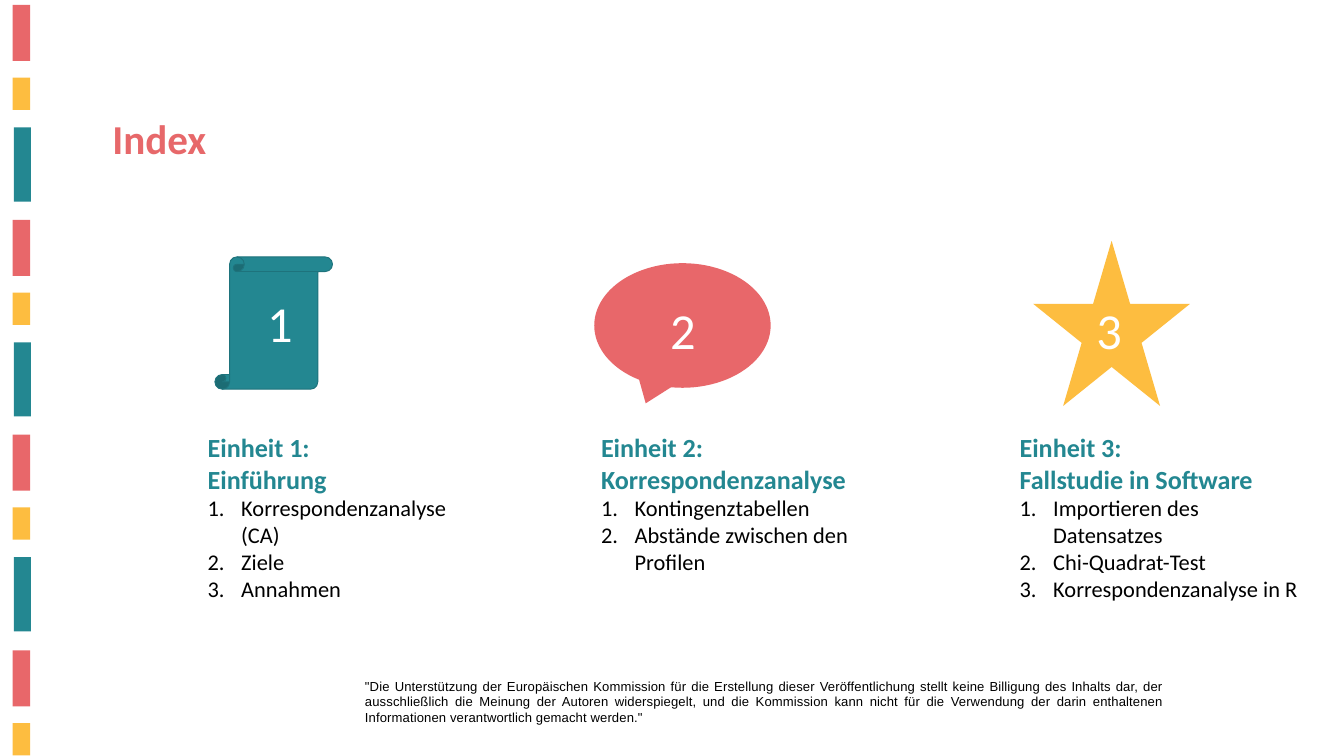
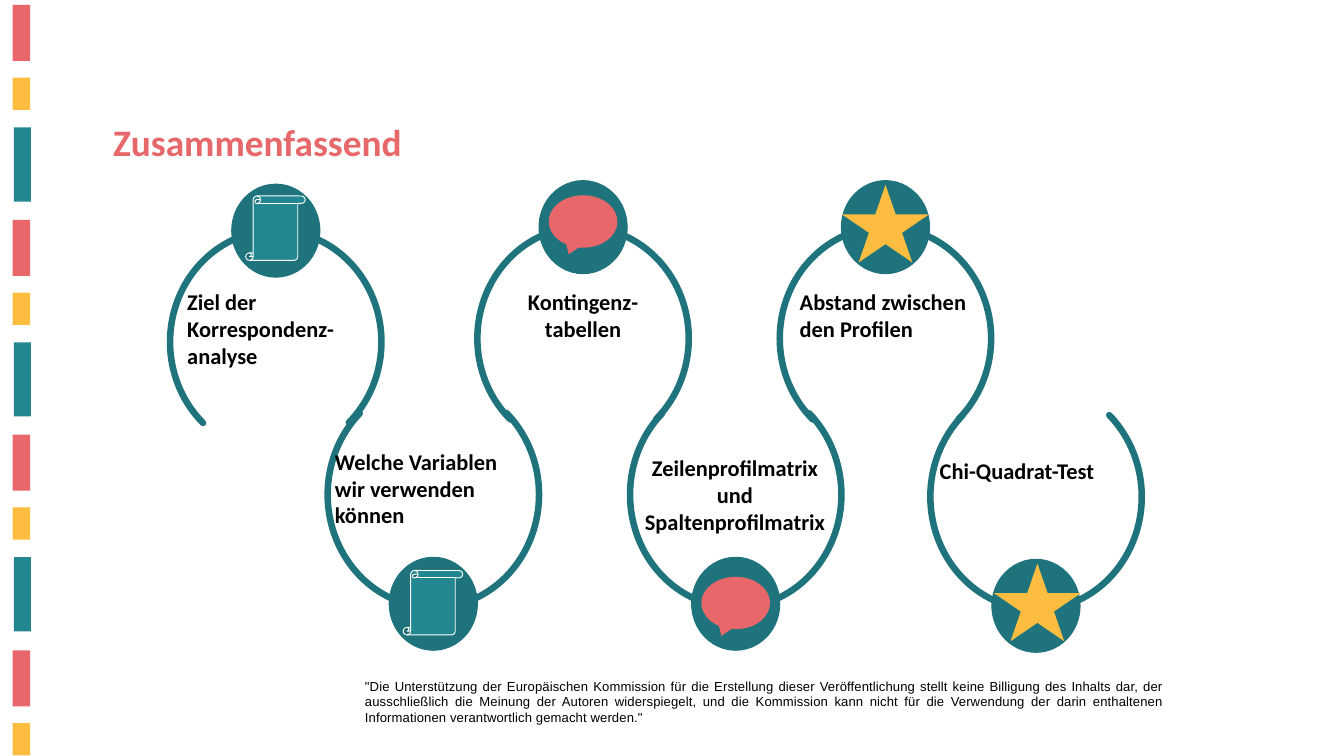
"""Build the index and summary slides of a course on correspondence analysis."""
from dataclasses import dataclass
from typing import NamedTuple, Optional

from lxml.etree import SubElement
from pptx import Presentation
from pptx.dml.color import RGBColor
from pptx.enum.shapes import MSO_SHAPE as Kind
from pptx.enum.text import MSO_ANCHOR as Anchor, MSO_AUTO_SIZE as Fit, PP_ALIGN as Align
from pptx.oxml.ns import qn
from pptx.shapes.autoshape import Shape
from pptx.slide import Slide
from pptx.text.text import TextFrame
from pptx.util import Pt

PX = 9525
TEAL = RGBColor(0x23, 0x87, 0x91)
DARK = RGBColor(0x1E, 0x73, 0x7C)
RED = RGBColor(0xE8, 0x67, 0x6A)
ROSE = RGBColor(0xE7, 0x68, 0x6A)
GOLD = RGBColor(0xFD, 0xBD, 0x40)
BLACK = RGBColor(0, 0, 0)
WHITE = RGBColor(0xFF, 0xFF, 0xFF)

NOTE = (
    '"Die Unterstützung der Europäischen Kommission für die Erstellung dieser '
    "Veröffentlichung stellt keine Billigung des Inhalts dar, der ausschließlich "
    "die Meinung der Autoren widerspiegelt, und die Kommission kann nicht für die "
    'Verwendung der darin enthaltenen Informationen verantwortlich gemacht werden."'
)


class Box(NamedTuple):
    """A place on the slide in px."""
    left: int
    top: int
    width: int
    height: int

    def emu(self) -> list[int]:
        """Return the four lengths in EMU."""
        return [size * PX for size in self]


class Style(NamedTuple):
    """The look of a paragraph."""
    size: int
    color: RGBColor
    bold: bool = False
    align: Align = Align.LEFT
    face: str = "Calibri"


class Icon(NamedTuple):
    """A filled symbol and its size in a circle."""
    kind: Kind
    fill: RGBColor
    width: int
    height: int
    edge: Optional[RGBColor] = None


class Stripe(NamedTuple):
    """A dash of the side band, repeated downwards."""
    box: Box
    fill: RGBColor
    count: int


@dataclass
class Unit:
    """A column of the index."""
    icon: Icon
    place: Box
    digit: Box
    body: Box
    head: list[str]
    items: list[str]


@dataclass
class Loop:
    """An arc with a circle, a symbol and a label."""
    left: int
    top: int
    down: bool
    icon: Icon
    shift: tuple[int, int]
    label: Box
    lines: list[str]
    align: Align = Align.LEFT


HEAD = Style(28, TEAL, True)
ITEM = Style(24, BLACK)
DIGIT = Style(54, WHITE)
FOOT = Style(14, BLACK, align=Align.JUSTIFY, face="Arial")

SCROLL = Icon(Kind.VERTICAL_SCROLL, TEAL, 85, 92, WHITE)
SPEECH = Icon(Kind.OVAL_CALLOUT, RED, 98, 75)
STAR = Icon(Kind.STAR_5_POINT, GOLD, 124, 111)

STRIPES = [
    Stripe(Box(18, 7, 25, 80), RED, 4),
    Stripe(Box(18, 111, 25, 46), GOLD, 4),
    Stripe(Box(20, 182, 24, 106), TEAL, 3),
]

UNITS = [
    Unit(SCROLL._replace(edge=DARK), Box(307, 367, 168, 189), Box(372, 413, 152, 97),
         Box(287, 612, 408, 339), ["Einheit 1:", "Einführung"],
         ["Korrespondenzanalyse (CA)", "Ziele", "Annahmen"]),
    Unit(SPEECH, Box(849, 376, 252, 178), Box(948, 423, 104, 97),
         Box(849, 612, 396, 217), ["Einheit 2: Korrespondenzanalyse"],
         ["Kontingenztabellen", "Abstände zwischen den Profilen"]),
    Unit(STAR, Box(1476, 344, 224, 236), Box(1557, 423, 144, 97),
         Box(1447, 612, 426, 255), ["Einheit 3:", "Fallstudie in Software"],
         ["Importieren des Datensatzes", "Chi-Quadrat-Test", "Korrespondenzanalyse in R"]),
]

LOOPS = [
    Loop(243, 329, False, SCROLL, (20, 17), Box(258, 407, 278, 165),
         ["Ziel der Korrespondenz-analyse"]),
    Loop(468, 545, True, SCROLL, (20, 19), Box(469, 635, 296, 165),
         ["Welche Variablen wir verwenden können"]),
    Loop(682, 324, False, SPEECH, (14, 21), Box(685, 407, 296, 126),
         ["Kontingenz-", "tabellen"], Align.CENTER),
    Loop(900, 545, True, SPEECH, (14, 28), Box(911, 644, 278, 126),
         ["Zeilenprofilmatrix und Spaltenprofilmatrix"], Align.CENTER),
    Loop(1114, 324, False, STAR, (1, 6), Box(1133, 407, 264, 126),
         ["Abstand zwischen den Profilen"]),
    Loop(1329, 548, True, STAR, (3, 6), Box(1333, 648, 297, 87), ["Chi-Quadrat-Test"]),
]


def draw(shapes, kind: Kind, box: Box, fill: Optional[RGBColor] = None,
         edge: Optional[RGBColor] = None, width: int = 1) -> Shape:
    """Add a preset shape with plain fill and edge."""
    shape = shapes.add_shape(kind, *box.emu())
    shape.shadow.inherit = False
    if fill is None:
        shape.fill.background()
    else:
        shape.fill.solid()
        shape.fill.fore_color.rgb = fill
    if edge is None:
        shape.line.fill.background()
    else:
        shape.line.color.rgb = edge
        shape.line.width = Pt(width)
    return shape


def write(frame: TextFrame, lines: list[str], style: Style,
          number: bool = False, more: bool = False) -> None:
    """Write lines as paragraphs, numbered or plain."""
    frame.word_wrap = True
    frame.auto_size = Fit.NONE
    frame.vertical_anchor = Anchor.TOP
    for line in lines:
        para = frame.add_paragraph() if more else frame.paragraphs[0]
        more = True
        para.text = line
        para.alignment = style.align
        para.space_before = Pt(0)
        props = para.font and para.alignment is not None and frame.paragraphs[-1]
        props = props._p.get_or_add_pPr()
        for old in props.findall(qn("a:defRPr")):
            props.remove(old)
        indent = 48 * PX if number else 0
        props.set("marL", str(indent))
        props.set("indent", str(-indent))
        if number:
            SubElement(props, qn("a:buFont"), typeface="+mj-lt")
            SubElement(props, qn("a:buAutoNum"), type="arabicPeriod")
        else:
            SubElement(props, qn("a:buNone"))
        font = para.font
        font.name = style.face
        font.size = Pt(style.size)
        font.bold = style.bold
        font.color.rgb = style.color


def label(slide: Slide, box: Box, lines: list[str], style: Style) -> Shape:
    """Add a text box."""
    shape = slide.shapes.add_textbox(*box.emu())
    write(shape.text_frame, lines, style)
    return shape


def place(shape: Shape, box: Box) -> None:
    """Move a placeholder to a box."""
    shape.left, shape.top, shape.width, shape.height = box.emu()


def title(slide: Slide, text: str, box: Box, size: int) -> None:
    """Fill the title placeholder."""
    place(slide.shapes.title, box)
    write(slide.shapes.title.text_frame, [text], Style(size, ROSE, True))


def frame_master(deck, slide: Slide) -> None:
    """Draw the side band and footer and move them to the master."""
    parts = [
        draw(slide.shapes, Kind.RECTANGLE, box._replace(top=box.top + step * 922 // 3), fill)
        for box, fill, count in STRIPES for step in range(count)
    ]
    foot = label(slide, Box(512, 964, 1160, 78), [NOTE], FOOT)
    for props in foot.element.iter(qn("a:defRPr")):
        props.set("spc", "10")
    for mark, part in enumerate(parts + [foot], 100):
        part.element.nvSpPr.cNvPr.set("id", str(mark))
        deck.slide_master.shapes.element.append(part.element)


def index(slide: Slide) -> None:
    """Fill the index slide."""
    title(slide, "Index", Box(151, 157, 650, 152), 44)
    *bodies, spare = [hold for hold in slide.placeholders if hold.placeholder_format.idx]
    spare.element.getparent().remove(spare.element)
    for rank, (unit, body) in enumerate(zip(UNITS, bodies), 1):
        place(body, unit.body)
        write(body.text_frame, unit.head, HEAD)
        write(body.text_frame, unit.items, ITEM, number=True, more=True)
        draw(slide.shapes, unit.icon.kind, unit.place, unit.icon.fill, unit.icon.edge)
        label(slide, unit.digit, [str(rank)], DIGIT)


def link(slide: Slide, loop: Loop) -> None:
    """Draw one loop of the chain."""
    group = slide.shapes.add_group_shape().shapes
    tall = 323 if loop.down else 319
    arc = draw(group, Kind.ARC, Box(loop.left, loop.top, 302, tall), edge=DARK, width=7)
    arc.adjustments[0], arc.adjustments[1] = 79.141, 28.684
    arc.rotation = 180 if loop.down else 0
    arc.element.spPr.find(qn("a:ln")).set("cap", "rnd")
    disc = Box(loop.left + 88, loop.top + (251 if loop.down else -66), 126, 133)
    draw(group, Kind.OVAL, disc, DARK, DARK)
    icon, (right, below) = loop.icon, loop.shift
    spot = Box(disc.left + right, disc.top + below, icon.width, icon.height)
    draw(slide.shapes, icon.kind, spot, icon.fill, icon.edge)
    label(slide, loop.label, loop.lines, Style(24, BLACK, True, loop.align))


def main() -> None:
    """Build and save the deck."""
    deck = Presentation()
    deck.slide_width, deck.slide_height = 1920 * PX, 1080 * PX
    first = deck.slides.add_slide(deck.slide_layouts[4])
    frame_master(deck, first)
    index(first)
    last = deck.slides.add_slide(deck.slide_layouts[5])
    title(last, "Zusammenfassend", Box(152, 165, 632, 74), 40)
    for loop in LOOPS:
        link(last, loop)


    deck.save("out.pptx")


if __name__ == "__main__":
    main()
